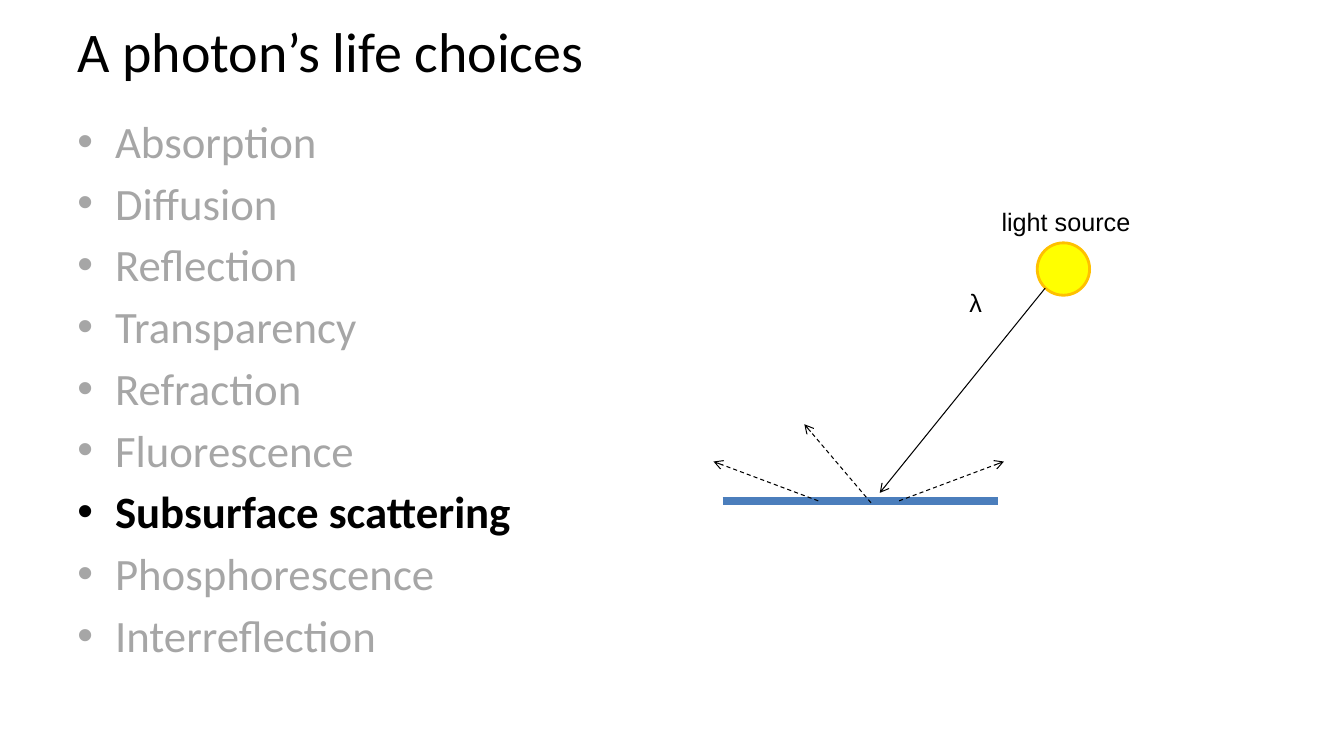
from dataclasses import dataclass

from lxml.etree import SubElement
from pptx import Presentation
from pptx.dml.color import RGBColor
from pptx.enum.dml import MSO_LINE
from pptx.enum.shapes import MSO_CONNECTOR, MSO_SHAPE
from pptx.enum.text import MSO_ANCHOR
from pptx.oxml.ns import qn
from pptx.slide import Slide
from pptx.util import Cm, Pt


@dataclass
class Ray:
    start: tuple[float, float]
    end: tuple[float, float]
    color: str = "000000"
    width: float = 0.75
    dashed: bool = False
    arrow: bool = True


@dataclass
class Label:
    text: str
    box: tuple[float, float, float, float]
    wrap: bool = True


CHOICES = [
    "Absorption", "Diffusion", "Reflection", "Transparency", "Refraction",
    "Fluorescence", "Subsurface scattering", "Phosphorescence", "Interreflection",
]
ACTIVE = "Subsurface scattering"
RAYS = [
    Ray((18.21, 12.62), (25.15, 12.62), color="4B7EBC", width=6, arrow=False),
    Ray((26.34, 7.26), (22.17, 12.42)),
    Ray((21.95, 12.67), (20.27, 10.69), dashed=True),
    Ray((20.62, 12.62), (17.98, 11.63), dashed=True),
    Ray((22.66, 12.62), (25.3, 11.63), dashed=True),
]
LABELS = [
    Label("λ", (24.18, 7.11, 0.84, 1.02), wrap=False),
    Label("light source", (24.99, 5.08, 3.81, 1.07)),
]


def paint(target, color: str) -> None:
    target.rgb = RGBColor.from_string(color)


def add_box(slide: Slide, box: tuple, wrap: bool = True, anchor=MSO_ANCHOR.TOP):
    frame = slide.shapes.add_textbox(*map(Cm, box)).text_frame
    frame.word_wrap = wrap
    frame.vertical_anchor = anchor
    return frame


def write(para, text: str, *, size: float, font: str,
          color: str = "000000", bold: bool = False) -> None:
    run = para.add_run()
    run.text = text
    run.font.size = Pt(size)
    run.font.name = font
    run.font.bold = bold
    paint(run.font.color, color)


def bullet(para) -> None:
    para.space_before = Pt(5.7)
    props = para._p.get_or_add_pPr()
    props.set("marL", str(Cm(0.95)))
    props.set("indent", str(Cm(-0.95)))
    SubElement(props, qn("a:buFont"), typeface="Arial")
    SubElement(props, qn("a:buChar"), char="•")


def add_list(slide: Slide) -> None:
    frame = add_box(slide, (1.7, 2.74, 30.48, 14.27))
    for index, choice in enumerate(CHOICES):
        para = frame.add_paragraph() if index else frame.paragraphs[0]
        bullet(para)
        active = choice == ACTIVE
        write(para, choice, size=32, font="Calibri", bold=active,
              color="000000" if active else "A6A6A6")


def add_sun(slide: Slide) -> None:
    sun = slide.shapes.add_shape(
        MSO_SHAPE.OVAL, Cm(26.14), Cm(6.12), Cm(1.32), Cm(1.32))
    sun.shadow.inherit = False
    sun.fill.solid()
    paint(sun.fill.fore_color, "FFFF00")
    paint(sun.line.color, "FFC000")
    sun.line.width = Pt(2)


def add_ray(slide: Slide, ray: Ray) -> None:
    link = slide.shapes.add_connector(
        MSO_CONNECTOR.STRAIGHT, *map(Cm, ray.start + ray.end))
    paint(link.line.color, ray.color)
    link.line.width = Pt(ray.width)
    if ray.dashed:
        link.line.dash_style = MSO_LINE.DASH
    if ray.arrow:
        SubElement(link.line._get_or_add_ln(), qn("a:tailEnd"), type="arrow")
    SubElement(link._element.spPr, qn("a:effectLst"))


def main() -> None:
    deck = Presentation()
    deck.slide_width, deck.slide_height = Cm(33.87), Cm(19.05)
    slide = deck.slides.add_slide(deck.slide_layouts[6])
    title = add_box(slide, (1.7, 0, 30.48, 2.54), anchor=MSO_ANCHOR.MIDDLE)
    write(title.paragraphs[0], "A photon’s life choices", size=40, font="Calibri")
    add_list(slide)
    add_sun(slide)
    for ray in RAYS:
        add_ray(slide, ray)
    for label in LABELS:
        frame = add_box(slide, label.box, wrap=label.wrap)
        write(frame.paragraphs[0], label.text, size=18, font="Arial")
    deck.save("out.pptx")


if __name__ == "__main__":
    main()
